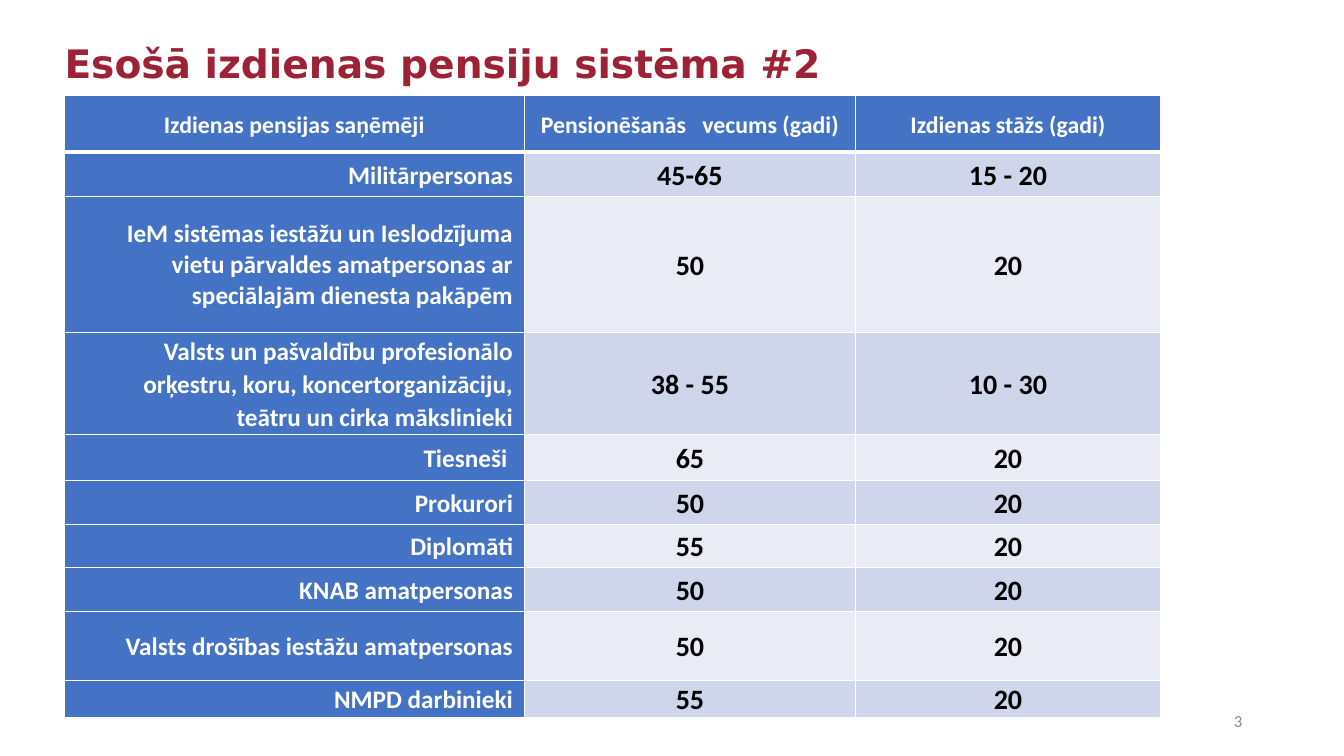
from dataclasses import dataclass

from lxml import etree
from pptx import Presentation
from pptx.dml.color import RGBColor
from pptx.enum.text import MSO_ANCHOR, PP_ALIGN
from pptx.oxml.ns import qn
from pptx.slide import Slide
from pptx.table import _Cell
from pptx.text.text import TextFrame
from pptx.util import Inches, Pt

LEFT, CENTER, RIGHT = PP_ALIGN.LEFT, PP_ALIGN.CENTER, PP_ALIGN.RIGHT
MIDDLE = MSO_ANCHOR.MIDDLE
SLIDE_WIDTH, SLIDE_HEIGHT = Inches(13.33), Inches(7.5)

WHITE, BLACK, BLUE = "FFFFFF", "000000", "4472C4"
TITLE_RED, NUMBER_GRAY = "9D2235", "8C8C8C"
BANDS = ("CFD5EA", "E9EBF5")
THIN, THICK = 1, 3


@dataclass(frozen=True)
class Box:
    """Position and size as percentages of the slide's width and height."""
    left: float
    top: float
    width: float
    height: float


@dataclass(frozen=True)
class TextStyle:
    size: float
    color: str
    align: PP_ALIGN
    bold: bool = True
    font: str = "Calibri"
    line_spacing: float = 1.07
    space_after: float = 8


@dataclass(frozen=True)
class PensionGroup:
    name: str
    age: str
    service: str
    height: float
    name_style: TextStyle


HEADER_STYLE = TextStyle(17, WHITE, CENTER)
NAME_STYLE = TextStyle(18, WHITE, RIGHT)
TIGHT_NAME_STYLE = TextStyle(18, WHITE, RIGHT, line_spacing=1.0, space_after=4)
VALUE_STYLE = TextStyle(20, BLACK, CENTER)
TITLE_STYLE = TextStyle(28, TITLE_RED, LEFT, font="DejaVu Sans", line_spacing=0.9, space_after=0)
NUMBER_STYLE = TextStyle(12, NUMBER_GRAY, RIGHT, bold=False, line_spacing=1.0, space_after=0)

TITLE_BOX = Box(4.05, 3.07, 86.27, 11.33)
NUMBER_BOX = Box(70.67, 92.67, 22.5, 5.33)
TABLE_LEFT, TABLE_TOP = 4.8, 12.67
COLUMN_WIDTHS = (34.2, 24.68, 22.65)
HEADER_HEIGHT = 7.47
HEADERS = ("Izdienas pensijas saņēmēji", "Pensionēšanās   vecums (gadi)", "Izdienas stāžs (gadi)")
GROUPS = (
    PensionGroup("Militārpersonas", "45-65", "15 - 20", 5.87, NAME_STYLE),
    PensionGroup("IeM sistēmas iestāžu un Ieslodzījuma vietu pārvaldes amatpersonas "
                 "ar speciālajām dienesta pakāpēm", "50", "20", 18, TIGHT_NAME_STYLE),
    PensionGroup("Valsts un pašvaldību profesionālo orķestru, koru, koncertorganizāciju, "
                 "teātru un cirka mākslinieki", "38 - 55", "10 - 30", 13.47, NAME_STYLE),
    PensionGroup("Tiesneši ", "65", "20", 6.13, NAME_STYLE),
    PensionGroup("Prokurori", "50", "20", 5.73, NAME_STYLE),
    PensionGroup("Diplomāti", "55", "20", 5.73, NAME_STYLE),
    PensionGroup("KNAB amatpersonas", "50", "20", 5.87, NAME_STYLE),
    PensionGroup("Valsts drošības iestāžu amatpersonas", "50", "20", 9.07, NAME_STYLE),
    PensionGroup("NMPD darbinieki", "55", "20", 4.93, NAME_STYLE),
)


def rgb(color: str) -> RGBColor:
    return RGBColor.from_string(color)


def across(percent: float) -> int:
    return round(SLIDE_WIDTH * percent / 100)


def down(percent: float) -> int:
    return round(SLIDE_HEIGHT * percent / 100)


def place(box: Box) -> dict[str, int]:
    return {"left": across(box.left), "top": down(box.top),
            "width": across(box.width), "height": down(box.height)}


def set_attributes(target: object, values: dict[str, object]) -> None:
    for name, value in values.items():
        setattr(target, name, value)


def write_text(frame: TextFrame, text: str, style: TextStyle) -> None:
    paragraph = frame.paragraphs[0]
    set_attributes(paragraph, {"alignment": style.align, "line_spacing": style.line_spacing,
                               "space_before": Pt(0), "space_after": Pt(style.space_after)})
    run = paragraph.add_run()
    run.text = text
    set_attributes(run.font, {"name": style.font, "size": Pt(style.size), "bold": style.bold})
    run.font.color.rgb = rgb(style.color)


def add_border(cell: _Cell, side: str, width: float) -> None:
    properties = cell._tc.get_or_add_tcPr()
    line = etree.SubElement(properties, qn(f"a:ln{side}"), w=str(Pt(width)))
    fill = etree.SubElement(line, qn("a:solidFill"))
    etree.SubElement(fill, qn("a:srgbClr"), val=WHITE)


def format_cell(cell: _Cell, text: str, style: TextStyle, color: str,
                top: float, bottom: float) -> None:
    set_attributes(cell, {"vertical_anchor": MIDDLE, "margin_left": Inches(0.11),
                          "margin_right": Inches(0.11), "margin_top": 0, "margin_bottom": 0})
    for side, width in {"L": THIN, "R": THIN, "T": top, "B": bottom}.items():
        add_border(cell, side, width)
    cell.fill.solid()
    cell.fill.fore_color.rgb = rgb(color)
    write_text(cell.text_frame, text, style)


def add_title(slide: Slide) -> None:
    title = slide.shapes.title
    set_attributes(title, place(TITLE_BOX))
    set_attributes(title.text_frame, {"vertical_anchor": MIDDLE, "word_wrap": True})
    write_text(title.text_frame, "Esošā izdienas pensiju sistēma #2", TITLE_STYLE)


def add_pension_table(slide: Slide) -> None:
    heights = [HEADER_HEIGHT, *(group.height for group in GROUPS)]
    box = Box(TABLE_LEFT, TABLE_TOP, sum(COLUMN_WIDTHS), sum(heights))
    table = slide.shapes.add_table(len(heights), len(COLUMN_WIDTHS), **place(box)).table
    for column, width in zip(table.columns, COLUMN_WIDTHS):
        column.width = across(width)
    for row, height in zip(table.rows, heights):
        row.height = down(height)
    for column, header in enumerate(HEADERS):
        format_cell(table.cell(0, column), header, HEADER_STYLE, BLUE, THIN, THICK)
    for index, group in enumerate(GROUPS):
        band = BANDS[index % len(BANDS)]
        top = THIN if index else THICK
        cells = ((group.name, group.name_style, BLUE),
                 (group.age, VALUE_STYLE, band),
                 (group.service, VALUE_STYLE, band))
        for column, (text, style, color) in enumerate(cells):
            format_cell(table.cell(index + 1, column), text, style, color, top, THIN)


def add_slide_number(slide: Slide) -> None:
    frame = slide.shapes.add_textbox(**place(NUMBER_BOX)).text_frame
    set_attributes(frame, {"vertical_anchor": MIDDLE, "word_wrap": True})
    write_text(frame, "3", NUMBER_STYLE)


def main() -> None:
    presentation = Presentation()
    set_attributes(presentation, {"slide_width": SLIDE_WIDTH, "slide_height": SLIDE_HEIGHT})
    slide = presentation.slides.add_slide(presentation.slide_layouts.get_by_name("Title Only"))
    add_slide_number(slide)
    add_title(slide)
    add_pension_table(slide)
    presentation.save("out.pptx")


if __name__ == "__main__":
    main()
